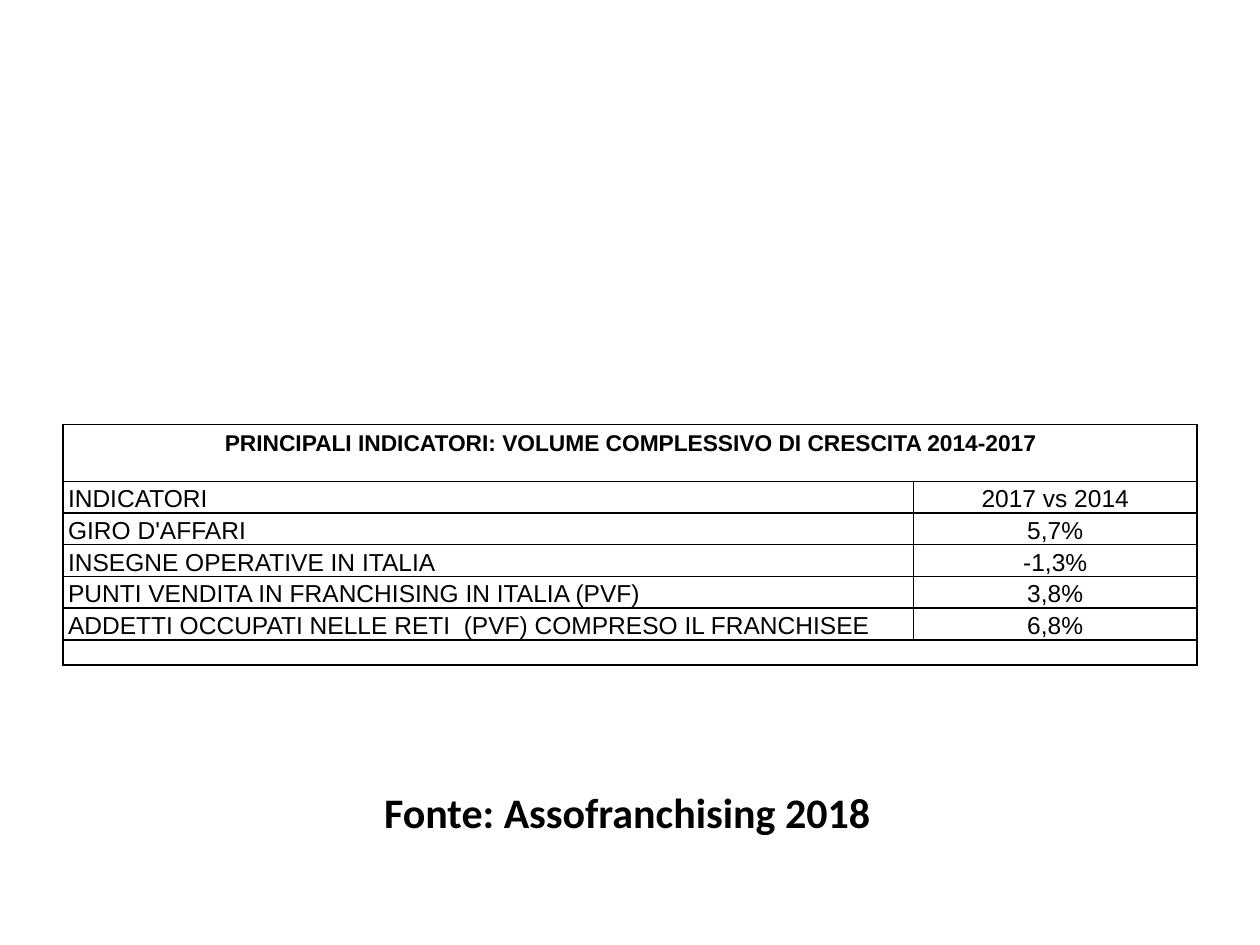
from lxml.etree import SubElement
from pptx import Presentation
from pptx.dml.color import RGBColor
from pptx.enum.text import MSO_ANCHOR, MSO_AUTO_SIZE, PP_ALIGN
from pptx.oxml.ns import qn
from pptx.util import Inches, Pt

COLORS = {"ink": "000000"}
TITLE = "PRINCIPALI INDICATORI: VOLUME COMPLESSIVO DI CRESCITA 2014-2017"
INDICATORS = [
    ("INDICATORI", "2017 vs 2014"),
    ("GIRO D'AFFARI", "5,7%"),
    ("INSEGNE OPERATIVE IN ITALIA", "-1,3%"),
    ("PUNTI VENDITA IN FRANCHISING IN ITALIA (PVF)", "3,8%"),
    ("ADDETTI OCCUPATI NELLE RETI  (PVF) COMPRESO IL FRANCHISEE", "6,8%"),
]
COLUMN_WIDTHS = [6.75, 1.75, 0.5]
ROW_HEIGHTS = [0.25, 0.2] + [0.25] * len(INDICATORS) + [0.2]
FIRST_INDICATOR = 2
LAST_ROW = len(ROW_HEIGHTS) - 1


def add_span(para, text, font, size, bold=False):
    span = para.add_run()
    span.text = text
    span.font.name = font
    span.font.size = Pt(size)
    span.font.bold = bold
    span.font.color.rgb = RGBColor.from_string(COLORS["ink"])


def write_cell(cell, text, size, align, anchor, bold=False):
    cell.vertical_anchor = anchor
    para = cell.text_frame.paragraphs[0]
    para.alignment = align
    para.line_spacing = 1.15
    add_span(para, text, "Arial", size, bold)


def set_borders(cell, sides):
    """Draw the named sides (of L, R, T, B) and clear the others."""
    properties = cell._tc.get_or_add_tcPr()
    for side in "LRTB":
        line = SubElement(properties, qn(f"a:ln{side}"), w=str(Pt(1)))
        if side in sides:
            fill = SubElement(line, qn("a:solidFill"))
            SubElement(fill, qn("a:srgbClr"), val=COLORS["ink"])
        else:
            SubElement(line, qn("a:noFill"))


def sides_for(row, column):
    """Title and closing rows are open inside; indicator rows are full grids."""
    if FIRST_INDICATOR <= row < LAST_ROW:
        return "LRTB"
    sides = {0: "T", 1: "B", LAST_ROW: "TB"}[row]
    if column == 0:
        sides += "L"
    if column == len(COLUMN_WIDTHS) - 1 or row == 0:
        sides += "R"
    return sides


def add_indicator_table(page, left, top, width, height):
    frame = page.shapes.add_table(
        len(ROW_HEIGHTS), len(COLUMN_WIDTHS), left, top, width, height)
    table = frame.table
    table.first_row = table.horz_banding = False
    for column, size in zip(table.columns, COLUMN_WIDTHS):
        column.width = Inches(size)
    for row, size in zip(table.rows, ROW_HEIGHTS):
        row.height = Inches(size)

    # Margins, borders and fill of every cell
    for r, row in enumerate(table.rows):
        for c, cell in enumerate(row.cells):
            cell.margin_left = cell.margin_right = Inches(0.04)
            cell.margin_top = cell.margin_bottom = 0
            set_borders(cell, sides_for(r, c))
            cell.fill.background()

    # Title row
    table.cell(0, 0).merge(table.cell(0, 2))
    write_cell(table.cell(0, 0), TITLE, 13, PP_ALIGN.CENTER,
               MSO_ANCHOR.BOTTOM, bold=True)

    # Indicator rows
    for r, (label, value) in enumerate(INDICATORS, FIRST_INDICATOR):
        anchor = MSO_ANCHOR.BOTTOM if r == FIRST_INDICATOR else MSO_ANCHOR.MIDDLE
        table.cell(r, 1).merge(table.cell(r, 2))
        write_cell(table.cell(r, 0), label, 14, PP_ALIGN.LEFT, anchor)
        write_cell(table.cell(r, 1), value, 14, PP_ALIGN.CENTER, anchor)

    # Small type keeps the empty cells from stretching their rows
    for cell in table.iter_cells():
        if not cell.text_frame.text:
            para = cell.text_frame.paragraphs[0]
            SubElement(para._p, qn("a:endParaRPr"), sz="1000")


def add_source(page, left, top, width, height):
    box = page.shapes.add_textbox(left, top, width, height)
    box.text_frame.word_wrap = False
    box.text_frame.auto_size = MSO_AUTO_SIZE.SHAPE_TO_FIT_TEXT
    add_span(box.text_frame.paragraphs[0], "Fonte: Assofranchising 2018",
             "Calibri", 24, bold=True)


def main():
    deck = Presentation()
    deck.slide_width, deck.slide_height = Inches(10), Inches(7.5)
    page = deck.slides.add_slide(deck.slide_layouts[6])
    add_indicator_table(page, Inches(0.5), Inches(3.37),
                        Inches(sum(COLUMN_WIDTHS)), Inches(sum(ROW_HEIGHTS)))
    add_source(page, Inches(2.95), Inches(6.19), Inches(4.1), Inches(0.5))
    deck.save("out.pptx")


if __name__ == "__main__":
    main()
